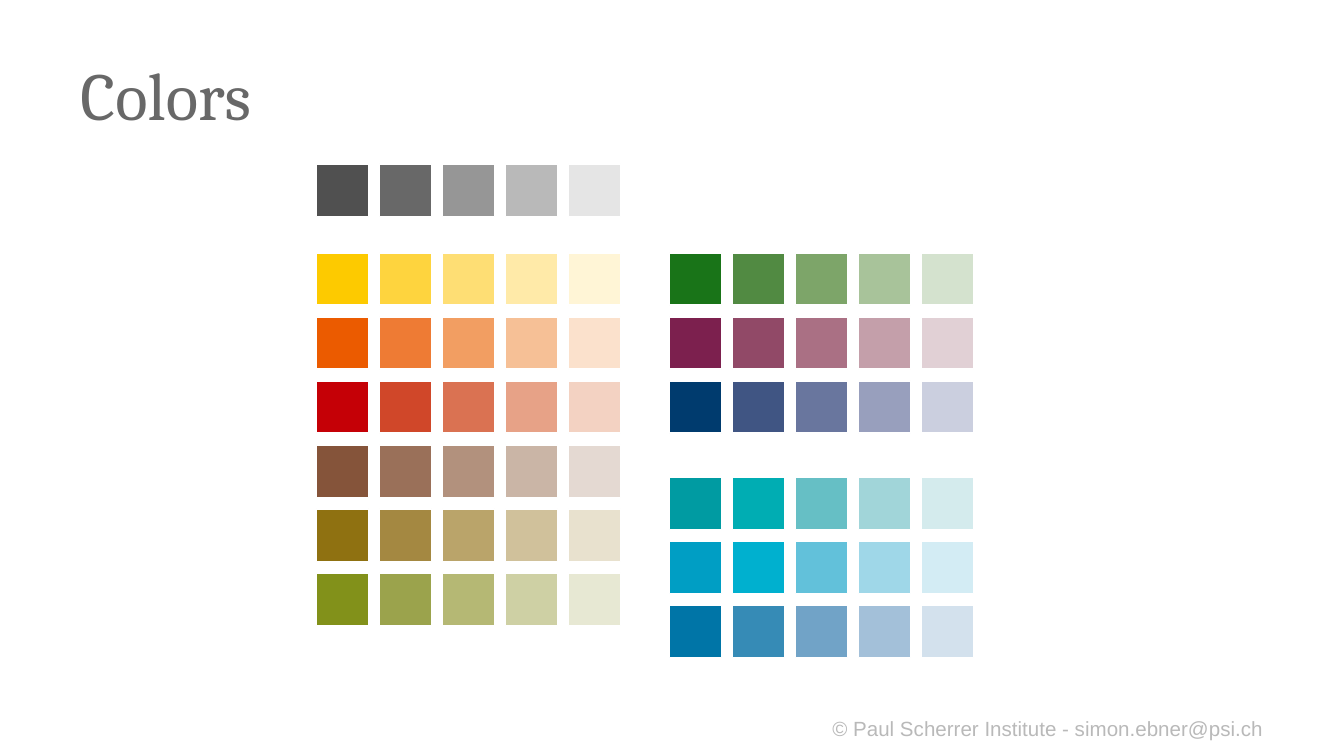
from dataclasses import dataclass

from pptx import Presentation
from pptx import util as u
from pptx.dml import color
from pptx.enum import shapes, text


@dataclass(frozen=True)
class Theme:
    """Colours, fonts and type sizes of the slide."""
    title_color: str = "686868"
    footer_color: str = "B9B9B9"
    outline: str = "FFFFFF"
    title_font: str = "Cambria"
    footer_font: str = "Arial"
    title_size: int = 36
    footer_size: int = 11
    grays: tuple = ("505050 686868 969696 B9B9B9 E5E5E5",)
    warm: tuple = (
        "FDCA00 FED43E FEDE74 FFEAA8 FFF5D6",
        "EB5B00 EE7B34 F29E62 F6C096 FBE1CC",
        "C50006 D04729 DA7252 E7A287 F3D2C2",
        "85543A 9A7059 B2917D CAB5A6 E4D9D2",
        "8F7111 A48841 BAA46A D0C19B E8E1CE",
        "82911A 9BA34C B5B874 CED0A4 E7E8D3",
    )
    deep: tuple = (
        "197418 518A42 7DA569 A8C39A D4E2CE",
        "7C204E 914967 AA7084 C49FAA E1D0D5",
        "003B6E 405583 69769E 989FBD CBCFDF",
    )
    blues: tuple = (
        "009BA2 00ADB3 66BFC5 A1D5D9 D4EBED",
        "009EC4 00B0CF 62C1DA 9FD7E8 D3ECF4",
        "0075A7 368BB6 71A3C7 A3C0D9 D3E1ED",
    )


THEME = Theme()
SWATCH = 0.99
COLUMN_PITCH = 1.19
ROW_PITCH = 1.21
LEFT_COLUMN = 5.98
RIGHT_COLUMN = 12.65


def write_text(shape, words, font_name, size, font_color, alignment, anchor):
    """Fill a shape with one formatted line of text."""
    frame = shape.text_frame
    frame.word_wrap = True
    frame.auto_size = text.MSO_AUTO_SIZE.NONE
    frame.vertical_anchor = anchor
    frame.margin_left = frame.margin_right = u.Cm(0.25)
    frame.margin_top = frame.margin_bottom = u.Cm(0.25)
    paragraph = frame.paragraphs[0]
    paragraph.alignment = alignment
    run = paragraph.add_run()
    run.text = words
    run.font.name = font_name
    run.font.size = u.Pt(size)
    run.font.color.rgb = color.RGBColor.from_string(font_color)


def add_title(slide, box, words):
    """Place and format the title placeholder in the box."""
    title = slide.shapes.title
    title.left, title.top, title.width, title.height = map(u.Cm, box)
    write_text(title, words, THEME.title_font, THEME.title_size,
               THEME.title_color, text.PP_ALIGN.LEFT, text.MSO_ANCHOR.MIDDLE)


def add_footer(slide, box, words):
    """Place the right-aligned copyright line in the box."""
    footer = slide.shapes.add_textbox(*map(u.Cm, box))
    write_text(footer, words, THEME.footer_font, THEME.footer_size,
               THEME.footer_color, text.PP_ALIGN.RIGHT, text.MSO_ANCHOR.TOP)


def add_palette(slide, left, top, rows):
    """Lay out rows of colour swatches from the given corner."""
    for row, tints in enumerate(rows):
        for column, tint in enumerate(tints.split()):
            swatch = slide.shapes.add_shape(
                shapes.MSO_SHAPE.RECTANGLE,
                u.Cm(left + column * COLUMN_PITCH), u.Cm(top + row * ROW_PITCH),
                u.Cm(SWATCH), u.Cm(SWATCH))
            swatch.shadow.inherit = False
            swatch.fill.solid()
            swatch.fill.fore_color.rgb = color.RGBColor.from_string(tint)
            swatch.line.color.rgb = color.RGBColor.from_string(THEME.outline)
            swatch.line.width = u.Pt(0.75)


def main():
    """Build the colour palette slide and save it."""
    presentation = Presentation()
    presentation.slide_width = u.Cm(25.4)
    presentation.slide_height = u.Cm(14.29)
    slide = presentation.slides.add_slide(
        presentation.slide_layouts.get_by_name("Title Only"))
    add_footer(slide, (14.78, 13.28, 9.35, 1.09),
               "© Paul Scherrer Institute - simon.ebner@psi.ch")
    add_title(slide, (1.27, 0.58, 22.86, 2.39), "Colors")
    add_palette(slide, LEFT_COLUMN, 3.1, THEME.grays)
    add_palette(slide, LEFT_COLUMN, 4.78, THEME.warm)
    add_palette(slide, RIGHT_COLUMN, 4.78, THEME.deep)
    add_palette(slide, RIGHT_COLUMN, 9.02, THEME.blues)
    presentation.save("out.pptx")


if __name__ == "__main__":
    main()
